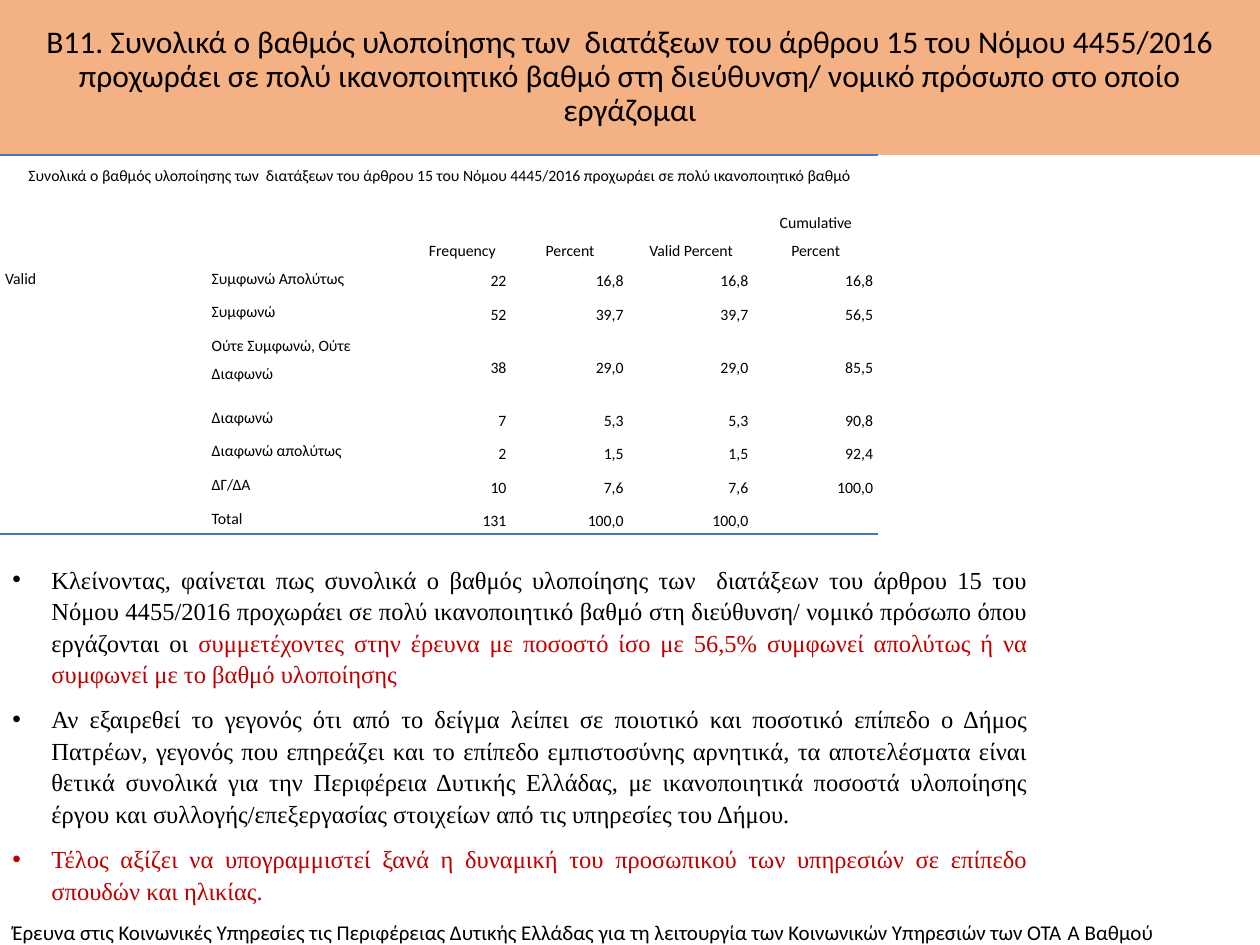
from dataclasses import dataclass

import lxml.etree
import pptx
import pptx.dml.color
import pptx.enum.shapes
import pptx.enum.text
import pptx.oxml.ns
import pptx.util

Inches = pptx.util.Inches
Pt = pptx.util.Pt
Align = pptx.enum.text.PP_ALIGN
Anchor = pptx.enum.text.MSO_ANCHOR
qn = pptx.oxml.ns.qn

COLORS = {"band": "F4B183", "text": "000000", "accent": "C00000", "rule": "4472C4"}
NO_STYLE = "{2D5ABB26-0587-4C30-8999-92F81FD0307C}"
COLUMN_WIDTHS = [1.64, 1.64, 0.78, 0.93, 0.99, 0.99]
TABLE_HEIGHT = 3.01
TALL_ROW = 0.57
TALL_ROWS = (1, 4)

TITLE = (
    "Β11. Συνολικά ο βαθμός υλοποίησης των  διατάξεων του άρθρου 15 του Νόμου 4455/2016 "
    "προχωράει σε πολύ ικανοποιητικό βαθμό στη διεύθυνση/ νομικό πρόσωπο στο οποίο εργάζομαι"
)
FOOTER = (
    "Έρευνα στις Κοινωνικές Υπηρεσίες τις Περιφέρειας Δυτικής Ελλάδας "
    "για τη λειτουργία των Κοινωνικών Υπηρεσιών των ΟΤΑ Ά Βαθμού"
)
CAPTION = (
    "Συνολικά ο βαθμός υλοποίησης των  διατάξεων του άρθρου 15 του Νόμου 4445/2016 "
    "προχωράει σε πολύ ικανοποιητικό βαθμό"
)
HEADERS = ["Frequency", "Percent", "Valid Percent", "Cumulative Percent"]


@dataclass
class Answer:
    label: str
    frequency: str
    percent: str
    valid: str
    cumulative: str


@dataclass
class Span:
    text: str
    color: str = "text"


ANSWERS = [
    Answer("Συμφωνώ Απολύτως", "22", "16,8", "16,8", "16,8"),
    Answer("Συμφωνώ", "52", "39,7", "39,7", "56,5"),
    Answer("Ούτε Συμφωνώ, Ούτε Διαφωνώ", "38", "29,0", "29,0", "85,5"),
    Answer("Διαφωνώ", "7", "5,3", "5,3", "90,8"),
    Answer("Διαφωνώ απολύτως", "2", "1,5", "1,5", "92,4"),
    Answer("ΔΓ/ΔΑ", "10", "7,6", "7,6", "100,0"),
    Answer("Total", "131", "100,0", "100,0", ""),
]

FINDINGS = [
    [
        Span(
            "Κλείνοντας, φαίνεται πως συνολικά ο βαθμός υλοποίησης των  διατάξεων του άρθρου 15 "
            "του Νόμου 4455/2016 προχωράει σε πολύ ικανοποιητικό βαθμό στη διεύθυνση/ νομικό "
            "πρόσωπο όπου εργάζονται οι "
        ),
        Span(
            "συμμετέχοντες στην έρευνα με ποσοστό ίσο με 56,5% συμφωνεί απολύτως ή να "
            "συμφωνεί με το βαθμό υλοποίησης",
            "accent",
        ),
    ],
    [
        Span(
            "Αν εξαιρεθεί το γεγονός ότι από το δείγμα λείπει σε ποιοτικό και ποσοτικό επίπεδο "
            "ο Δήμος Πατρέων, γεγονός που επηρεάζει και το επίπεδο εμπιστοσύνης αρνητικά, τα "
            "αποτελέσματα είναι θετικά συνολικά για την Περιφέρεια Δυτικής Ελλάδας, με "
            "ικανοποιητικά ποσοστά υλοποίησης έργου και συλλογής/επεξεργασίας στοιχείων από "
            "τις υπηρεσίες του Δήμου. "
        )
    ],
    [
        Span(
            "Τέλος αξίζει να υπογραμμιστεί ξανά η δυναμική του προσωπικού των υπηρεσιών σε "
            "επίπεδο σπουδών και ηλικίας. ",
            "accent",
        )
    ],
]


def rgb(name: str) -> pptx.dml.color.RGBColor:
    return pptx.dml.color.RGBColor.from_string(COLORS[name])


def set_font(font, size: float, family: str = "Calibri", color: str = "text") -> None:
    font.size = Pt(size)
    font.name = family
    font.color.rgb = rgb(color)


def add_text_box(page, left: float, top: float, width: float, height: float):
    box = page.shapes.add_textbox(Inches(left), Inches(top), Inches(width), Inches(height))
    box.text_frame.word_wrap = True
    box.text_frame.auto_size = pptx.enum.text.MSO_AUTO_SIZE.SHAPE_TO_FIT_TEXT
    return box.text_frame


def add_title(page) -> None:
    box = page.shapes.add_shape(
        pptx.enum.shapes.MSO_SHAPE.RECTANGLE, 0, 0, Inches(10), Inches(1.23)
    )
    box.shadow.inherit = False
    box.fill.solid()
    box.fill.fore_color.rgb = rgb("band")
    box.line.fill.background()
    box.text_frame.word_wrap = True
    box.text_frame.vertical_anchor = Anchor.MIDDLE
    para = box.text_frame.paragraphs[0]
    para.text = TITLE
    para.alignment = Align.CENTER
    para.line_spacing = 0.9
    set_font(para.font, 18)


def add_border(cell, side: str) -> None:
    line = lxml.etree.SubElement(cell._tc.get_or_add_tcPr(), qn(f"a:{side}"), w=str(Pt(1)))
    fill = lxml.etree.SubElement(line, qn("a:solidFill"))
    lxml.etree.SubElement(fill, qn("a:srgbClr"), val=COLORS["rule"])


def fill_cell(cell, text: str, align: Align, anchor: Anchor) -> None:
    cell.margin_left = cell.margin_right = cell.margin_top = cell.margin_bottom = 0
    cell.vertical_anchor = anchor
    cell.fill.background()
    para = cell.text_frame.paragraphs[0]
    para.text = text
    para.alignment = align
    para.line_spacing = Pt(16)
    para.space_after = Pt(8)
    properties = para._p.get_or_add_pPr()
    for margin in ("marL", "marR"):
        properties.set(margin, str(Inches(0.04)))
    set_font(para.font, 9)


def add_results(page) -> None:
    rows = [[CAPTION] + [""] * 5, ["", ""] + HEADERS]
    for index, answer in enumerate(ANSWERS):
        rows.append(["" if index else "Valid", answer.label, answer.frequency,
                     answer.percent, answer.valid, answer.cumulative])
    last = len(rows) - 1
    frame = page.shapes.add_table(
        len(rows), len(COLUMN_WIDTHS), 0, Inches(1.23),
        Inches(sum(COLUMN_WIDTHS)), Inches(TABLE_HEIGHT),
    )
    table = frame.table
    table.first_row = table.horz_banding = False
    table._tbl.tblPr.find(qn("a:tableStyleId")).text = NO_STYLE
    for column, width in zip(table.columns, COLUMN_WIDTHS):
        column.width = Inches(width)
    short_row = (TABLE_HEIGHT - TALL_ROW * len(TALL_ROWS)) / (len(rows) - len(TALL_ROWS))
    for r, values in enumerate(rows):
        table.rows[r].height = Inches(TALL_ROW if r in TALL_ROWS else short_row)
        for c, value in enumerate(values):
            cell = table.cell(r, c)
            if r == 0:
                add_border(cell, "lnT")
            if r == last or (r, c) == (2, 0):
                add_border(cell, "lnB")
            if r < 2:
                fill_cell(cell, value, Align.CENTER, Anchor.BOTTOM if r else Anchor.MIDDLE)
            elif c < 2:
                fill_cell(cell, value, Align.LEFT, Anchor.TOP)
            else:
                fill_cell(cell, value, Align.RIGHT, Anchor.MIDDLE)
    table.cell(0, 0).merge(table.cell(0, 5))
    table.cell(1, 0).merge(table.cell(1, 1))
    table.cell(2, 0).merge(table.cell(last, 0))


def add_findings(page) -> None:
    frame = add_text_box(page, 0, 4.41, 8.26, 2.83)
    frame.vertical_anchor = Anchor.MIDDLE
    for index, spans in enumerate(FINDINGS):
        para = frame.add_paragraph() if index else frame.paragraphs[0]
        para.alignment = Align.JUSTIFY
        para.line_spacing = 1.07
        para.space_after = Pt(8)
        properties = para._p.get_or_add_pPr()
        properties.set("marL", str(Inches(0.31)))
        properties.set("indent", str(Inches(-0.31)))
        lxml.etree.SubElement(properties, qn("a:buFont"), typeface="Arial")
        lxml.etree.SubElement(properties, qn("a:buChar"), char="•")
        set_font(para.font, 14, "Times New Roman", spans[0].color)
        for span in spans:
            run = para.add_run()
            run.text = span.text
            if span.color != spans[0].color:
                run.font.color.rgb = rgb(span.color)


def main() -> None:
    """Build the survey results slide and save it."""
    deck = pptx.Presentation()
    deck.slide_width, deck.slide_height = Inches(10), Inches(7.5)
    page = deck.slides.add_slide(deck.slide_layouts[6])
    add_title(page)
    para = add_text_box(page, 0, 7.25, 9.83, 0.3).paragraphs[0]
    para.text = FOOTER
    set_font(para.font, 12)
    add_findings(page)
    add_results(page)
    deck.save("out.pptx")


if __name__ == "__main__":
    main()
